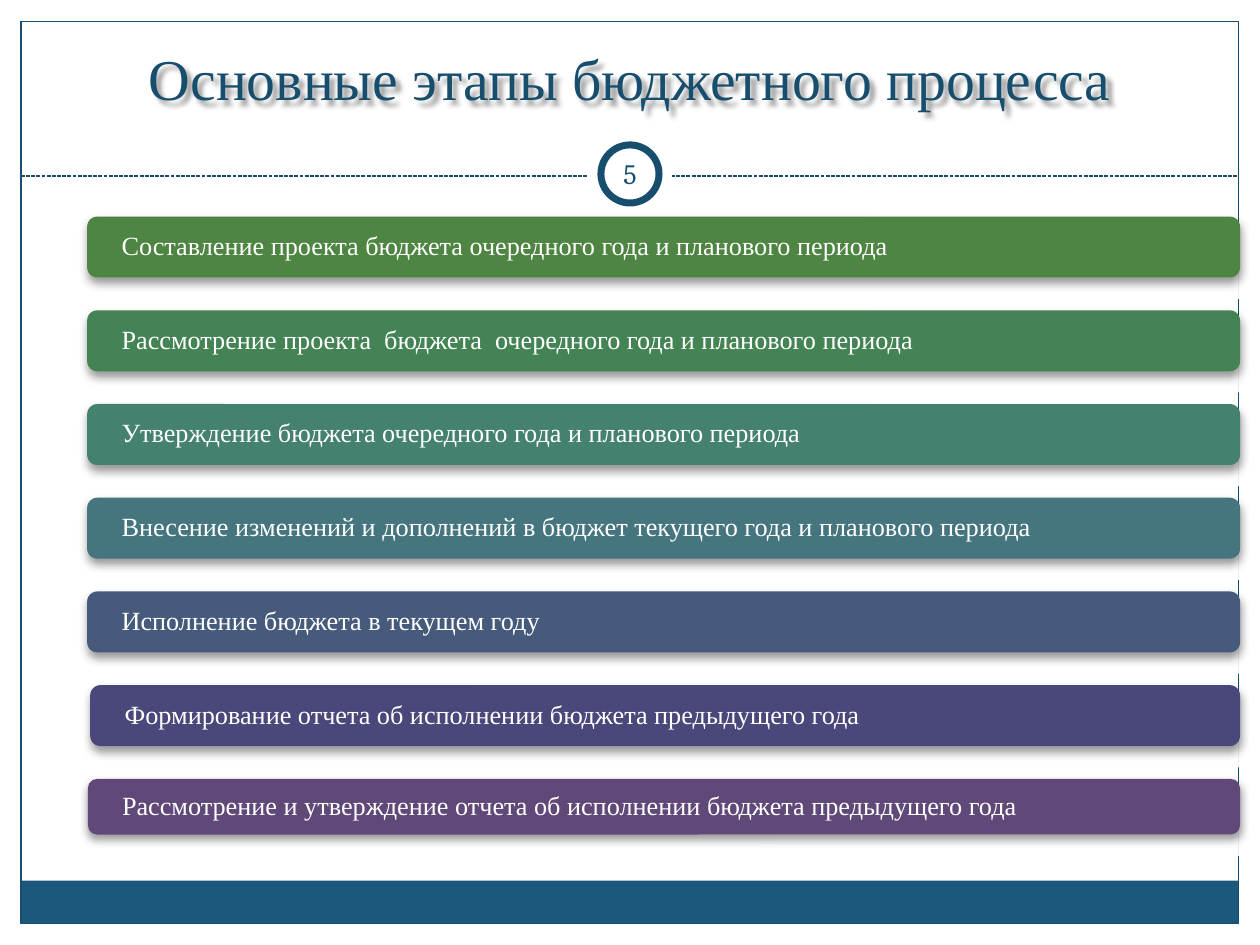
from dataclasses import dataclass

from lxml.etree import SubElement
from pptx import Presentation
from pptx.dml.color import RGBColor
from pptx.enum.dml import MSO_LINE
from pptx.enum.shapes import MSO_CONNECTOR, MSO_SHAPE
from pptx.enum.text import MSO_ANCHOR, MSO_AUTO_SIZE, PP_ALIGN
from pptx.oxml.ns import qn
from pptx.util import Pt

COLORS = {"white": "FFFFFF", "navy": "184E6D", "footer": "1B587C", "shadow": "000000"}
SERIF = "Times New Roman"
BAR_TOP, BAR_PITCH, BAR_RIGHT = 123.8, 53.55, 708.6


@dataclass
class Stage:
    text: str
    color: str
    left: float = 49.8
    height: float = 34.8
    strip_offset: float = 17.4


STAGES = [
    Stage("Составление проекта бюджета очередного года и планового периода", "4E8542"),
    Stage("Рассмотрение проекта  бюджета  очередного года и планового периода", "438354"),
    Stage("Утверждение бюджета очередного года и планового периода", "44816F"),
    Stage("Внесение изменений и дополнений в бюджет текущего года и планового периода", "45757E"),
    Stage("Исполнение бюджета в текущем году", "465B7C"),
    Stage("Формирование отчета об исполнении бюджета предыдущего года", "4A477A", left=51.6),
    Stage("Рассмотрение и утверждение отчета об исполнении бюджета предыдущего года",
          "604878", left=50.2, height=31.8, strip_offset=14.4),
]


def add_box(slide, kind, left: float, top: float, width: float, height: float,
            fill: str | None = None, line: str | None = None, line_width: float = 0.75):
    shape = slide.shapes.add_shape(kind, Pt(left), Pt(top), Pt(width), Pt(height))
    shape.shadow.inherit = False
    if fill:
        shape.fill.solid()
        shape.fill.fore_color.rgb = RGBColor.from_string(fill)
    else:
        shape.fill.background()
    if line:
        shape.line.color.rgb = RGBColor.from_string(line)
        shape.line.width = Pt(line_width)
    else:
        shape.line.fill.background()
    return shape


def set_text(shape, text: str, size: float, font: str, color: str, alignment: PP_ALIGN,
             anchor: MSO_ANCHOR, margins: tuple[float, float]) -> None:
    frame = shape.text_frame
    frame.text = text
    frame.word_wrap = True
    frame.auto_size = MSO_AUTO_SIZE.NONE
    frame.vertical_anchor = anchor
    frame.margin_left = frame.margin_right = Pt(margins[0])
    frame.margin_top = frame.margin_bottom = Pt(margins[1])
    paragraph = frame.paragraphs[0]
    paragraph.alignment = alignment
    run = paragraph.runs[0]
    run.font.size = Pt(size)
    run.font.name = font
    run.font.color.rgb = RGBColor.from_string(color)


def add_shadow(shape, blur: float, distance: float, degrees: int, opacity: int) -> None:
    shape.shadow.inherit = False
    effects = shape._element.spPr.find(qn("a:effectLst"))
    shadow = SubElement(effects, qn("a:outerShdw"), blurRad=str(Pt(blur)), dist=str(Pt(distance)),
                        dir=str(degrees * 60000), algn="tl", rotWithShape="0")
    color = SubElement(shadow, qn("a:srgbClr"), val=COLORS["shadow"])
    SubElement(color, qn("a:alpha"), val=str(opacity * 1000))


def add_frame(slide) -> None:
    # Footer band, border and dashed divider
    add_box(slide, MSO_SHAPE.RECTANGLE, 11.8, 503.2, 695.6, 24.4, COLORS["footer"])
    add_box(slide, MSO_SHAPE.RECTANGLE, 12, 12.2, 695.6, 515.4, line=COLORS["navy"])
    divider = slide.shapes.add_connector(MSO_CONNECTOR.STRAIGHT, Pt(12), Pt(100.6), Pt(707.6), Pt(100.6))
    divider.line.color.rgb = RGBColor.from_string(COLORS["navy"])
    divider.line.width = Pt(0.75)
    divider.line.dash_style = MSO_LINE.SQUARE_DOT
    SubElement(divider._element.spPr, qn("a:effectLst"))

    # Slide number badge
    add_box(slide, MSO_SHAPE.OVAL, 336, 75.4, 48, 48, COLORS["white"])
    add_box(slide, MSO_SHAPE.OVAL, 343.4, 82.8, 33.2, 33.2, COLORS["white"], COLORS["navy"], 4)
    number = slide.shapes.add_textbox(Pt(342), Pt(81.6), Pt(36), Pt(34.6))
    set_text(number, "5", 16, "Cambria", COLORS["navy"], PP_ALIGN.CENTER, MSO_ANCHOR.MIDDLE, (3.6, 3.6))


def add_stage(slide, stage: Stage, top: float) -> None:
    # Translucent strip behind the bar
    strip = add_box(slide, MSO_SHAPE.RECTANGLE, 16.6, top + stage.strip_offset, 692, 29.6, COLORS["white"])
    strip_color = strip._element.spPr.find(qn("a:solidFill")).find(qn("a:srgbClr"))
    SubElement(strip_color, qn("a:alpha"), val="90000")

    # Rounded bar with its label
    bar = add_box(slide, MSO_SHAPE.ROUNDED_RECTANGLE, stage.left, top,
                  BAR_RIGHT - stage.left, stage.height, stage.color)
    add_shadow(bar, 5.2, 3, 90, 40)
    set_text(bar, stage.text, 15, SERIF, COLORS["white"], PP_ALIGN.LEFT, MSO_ANCHOR.MIDDLE, (18, 0))
    bar.text_frame.paragraphs[0].line_spacing = 0.9


def main() -> None:
    presentation = Presentation()
    presentation.slide_width, presentation.slide_height = Pt(720), Pt(540)
    slide = presentation.slides.add_slide(presentation.slide_layouts[5])

    # Title
    title = slide.shapes.title
    title.left, title.top, title.width, title.height = Pt(24), Pt(18), Pt(672), Pt(49.8)
    set_text(title, "Основные этапы бюджетного процесса", 33, SERIF, COLORS["navy"],
             PP_ALIGN.CENTER, MSO_ANCHOR.BOTTOM, (7.2, 3.6))
    add_shadow(title, 3, 3, 45, 40)

    add_frame(slide)

    # Budget stages
    for index, stage in enumerate(STAGES):
        add_stage(slide, stage, BAR_TOP + index * BAR_PITCH)

    presentation.save("out.pptx")


if __name__ == "__main__":
    main()
